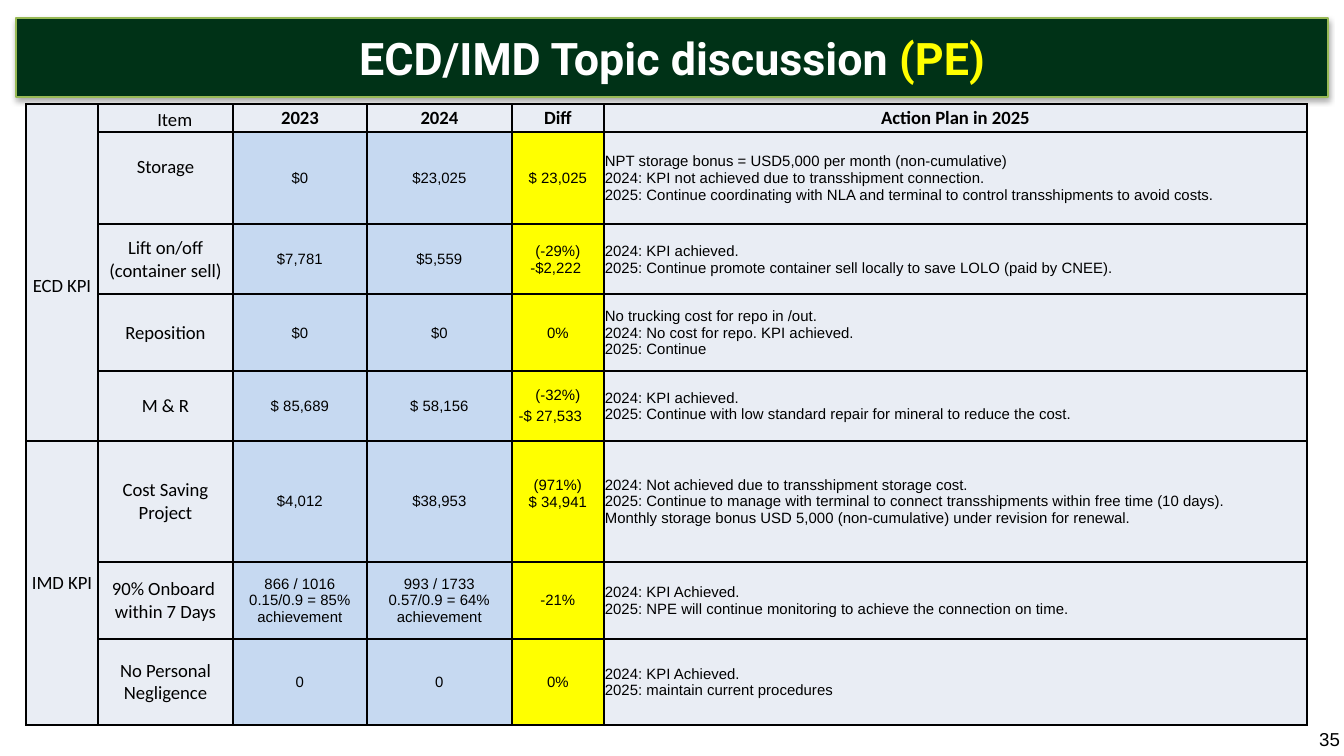
from dataclasses import dataclass

from lxml import etree
from pptx import Presentation
from pptx.dml.color import RGBColor
from pptx.enum.shapes import MSO_SHAPE
from pptx.enum.text import MSO_ANCHOR, PP_ALIGN
from pptx.oxml import parse_xml
from pptx.oxml.ns import nsdecls, qn
from pptx.util import Emu, Pt

RECTANGLE = MSO_SHAPE.RECTANGLE
MIDDLE = MSO_ANCHOR.MIDDLE
LEFT, CENTER = PP_ALIGN.LEFT, PP_ALIGN.CENTER

GREEN = RGBColor(0x00, 0x32, 0x17)
OLIVE = RGBColor(0x98, 0xB9, 0x55)
WHITE = RGBColor(0xFF, 0xFF, 0xFF)
BLACK = RGBColor(0x00, 0x00, 0x00)
YELLOW = RGBColor(0xFF, 0xFF, 0x00)
PALE = RGBColor(0xE9, 0xED, 0xF4)
BLUE = RGBColor(0xC6, 0xD9, 0xF1)

EMU_PER_PX = 914400 / 134.4


def px(length: int) -> Emu:
    return Emu(round(length * EMU_PER_PX))


@dataclass(frozen=True)
class Column:
    heading: str
    width: int
    fill: RGBColor
    font: str = "Arial"
    size: int = 8
    align: PP_ALIGN = CENTER


@dataclass(frozen=True)
class Kpi:
    height: int
    item: str
    year_2023: str
    year_2024: str
    diff: str
    plan: str
    item_lift: int = 0
    diff_lift: int = 0


@dataclass(frozen=True)
class Group:
    title: str
    kpis: tuple[Kpi, ...]
    drop: int = 0


HEADER_HEIGHT = 28
GROUP_WIDTH = 72
COLUMNS = (
    Column("　Item", 135, PALE, "Calibri", 10),
    Column("2023", 134, BLUE),
    Column("2024", 145, BLUE),
    Column("Diff", 92, YELLOW),
    Column("Action Plan in 2025", 703, PALE, align=LEFT),
)
GROUPS = (
    Group("ECD KPI", (
        Kpi(92, "Storage", "$0", "$23,025", "$ 23,025",
            "NPT storage bonus = USD5,000 per month (non-cumulative)\v"
            "2024: KPI not achieved due to transshipment connection.\v"
            "2025: Continue coordinating with NLA and terminal to control "
            "transshipments to avoid costs.", item_lift=22),
        Kpi(70, "Lift on/off\n(container sell)", "$7,781", "$5,559", "(-29%)\n-$2,222 ",
            "2024: KPI achieved.\v"
            "2025: Continue promote container sell locally to save LOLO (paid by CNEE)."),
        Kpi(77, "Reposition", "$0", "$0", "0%",
            "No trucking cost for repo in /out.\n"
            "2024: No cost for repo. KPI achieved.\n2025: Continue"),
        Kpi(70, "M & R", "$ 85,689", "$ 58,156", "(-32%)\v-$ 27,533　",
            "2024: KPI achieved.\n"
            "2025: Continue with low standard repair for mineral to reduce the cost."),
    ), drop=27),
    Group("IMD KPI", (
        Kpi(121, "Cost Saving Project", "$4,012", "$38,953", "(971%)\n$ 34,941",
            "2024: Not achieved due to transshipment storage cost.\n"
            "2025: Continue to manage with terminal to connect transshipments "
            "within free time (10 days).\n"
            "Monthly storage bonus USD 5,000 (non-cumulative) under revision for renewal.",
            diff_lift=16),
        Kpi(77, "90% Onboard \nwithin 7 Days", "866 / 1016\n0.15/0.9 = 85% achievement",
            "993 / 1733\n0.57/0.9 = 64% achievement", "-21%",
            "2024: KPI Achieved. \n"
            "2025: NPE will continue monitoring to achieve the connection on time."),
        Kpi(86, "No Personal Negligence", "0", "0", "0%",
            "2024: KPI Achieved.\n2025: maintain current procedures"),
    )),
)


def add_borders(cell) -> None:
    properties = cell._tc.get_or_add_tcPr()
    for side in ("lnL", "lnR", "lnT", "lnB"):
        properties.append(parse_xml(
            f'<a:{side} {nsdecls("a")} w="{Pt(1)}"><a:solidFill>'
            f'<a:srgbClr val="{BLACK}"/></a:solidFill></a:{side}>'))


def fill_cell(cell, text: str, fill: RGBColor, font: str = "Calibri", size: int = 10,
              align: PP_ALIGN = CENTER, bold: bool = False,
              drop: int = 0, lift: int = 0) -> None:
    cell.fill.solid()
    cell.fill.fore_color.rgb = fill
    cell.vertical_anchor = MIDDLE
    cell.margin_left = cell.margin_right = px(1)
    cell.margin_top, cell.margin_bottom = px(1 + drop), px(lift)
    cell.text_frame.text = text
    for paragraph in cell.text_frame.paragraphs:
        paragraph.alignment = align
        paragraph.font.name = font
        paragraph.font.size = Pt(size)
        paragraph.font.bold = bold
        paragraph.font.color.rgb = BLACK


def add_banner(slide) -> None:
    banner = slide.shapes.add_shape(RECTANGLE, px(16), px(18), px(1312), px(79))
    banner.shadow.inherit = False
    banner.fill.solid()
    banner.fill.fore_color.rgb = GREEN
    banner.line.color.rgb = OLIVE
    banner.line.width = Pt(0.75)
    effects = banner._element.spPr.find(qn("a:effectLst"))
    shadow = etree.SubElement(effects, qn("a:outerShdw"), blurRad=str(Pt(3.1)),
                              dist=str(Pt(1.8)), dir="5400000", rotWithShape="0")
    tint = etree.SubElement(shadow, qn("a:srgbClr"), val=str(BLACK))
    etree.SubElement(tint, qn("a:alpha"), val="35000")

    frame = banner.text_frame
    frame.margin_left = frame.margin_right = frame.margin_top = frame.margin_bottom = 0
    frame.vertical_anchor = MIDDLE
    title = frame.paragraphs[0]
    title.alignment = CENTER
    title.font.name = "Roboto"
    title.font.size = Pt(24)
    title.font.bold = True
    for words, color in (("ECD/IMD Topic discussion ", WHITE), ("(PE)", YELLOW)):
        run = title.add_run()
        run.text = words
        run.font.color.rgb = color


def add_kpi_table(slide) -> None:
    widths = [GROUP_WIDTH] + [column.width for column in COLUMNS]
    heights = [HEADER_HEIGHT] + [kpi.height for group in GROUPS for kpi in group.kpis]
    table = slide.shapes.add_table(len(heights), len(widths), px(26), px(104),
                                   px(sum(widths)), px(sum(heights))).table
    table.first_row = table.horz_banding = False
    for table_column, width in zip(table.columns, widths):
        table_column.width = px(width)
    for table_row, height in zip(table.rows, heights):
        table_row.height = px(height)
    for cell in table.iter_cells():
        add_borders(cell)

    for index, column in enumerate(COLUMNS, 1):
        fill_cell(table.cell(0, index), column.heading, PALE, bold=index > 1)

    row, group_top = 1, 0
    for group in GROUPS:
        for kpi in group.kpis:
            texts = (kpi.item, kpi.year_2023, kpi.year_2024, kpi.diff, kpi.plan)
            lifts = (kpi.item_lift, 0, 0, kpi.diff_lift, 0)
            for index, (column, text, lift) in enumerate(zip(COLUMNS, texts, lifts), 1):
                fill_cell(table.cell(row, index), text, column.fill, column.font,
                          column.size, column.align, lift=lift)
            row += 1
        group_cell = table.cell(group_top, 0)
        group_cell.merge(table.cell(row - 1, 0))
        fill_cell(group_cell, group.title, PALE, drop=group.drop)
        group_top = row


def add_page_number(slide) -> None:
    frame = slide.shapes.add_textbox(px(1306), px(724), px(86), px(31)).text_frame
    frame.word_wrap = True
    frame.vertical_anchor = MIDDLE
    number = frame.paragraphs[0]
    number.text = "35"
    number.font.name = "Arial"
    number.font.size = Pt(10)
    number.font.color.rgb = BLACK


def main() -> None:
    deck = Presentation()
    deck.slide_width, deck.slide_height = px(1344), px(756)
    slide = deck.slides.add_slide(deck.slide_layouts[6])
    add_banner(slide)
    add_kpi_table(slide)
    add_page_number(slide)
    deck.save("out.pptx")


if __name__ == "__main__":
    main()
